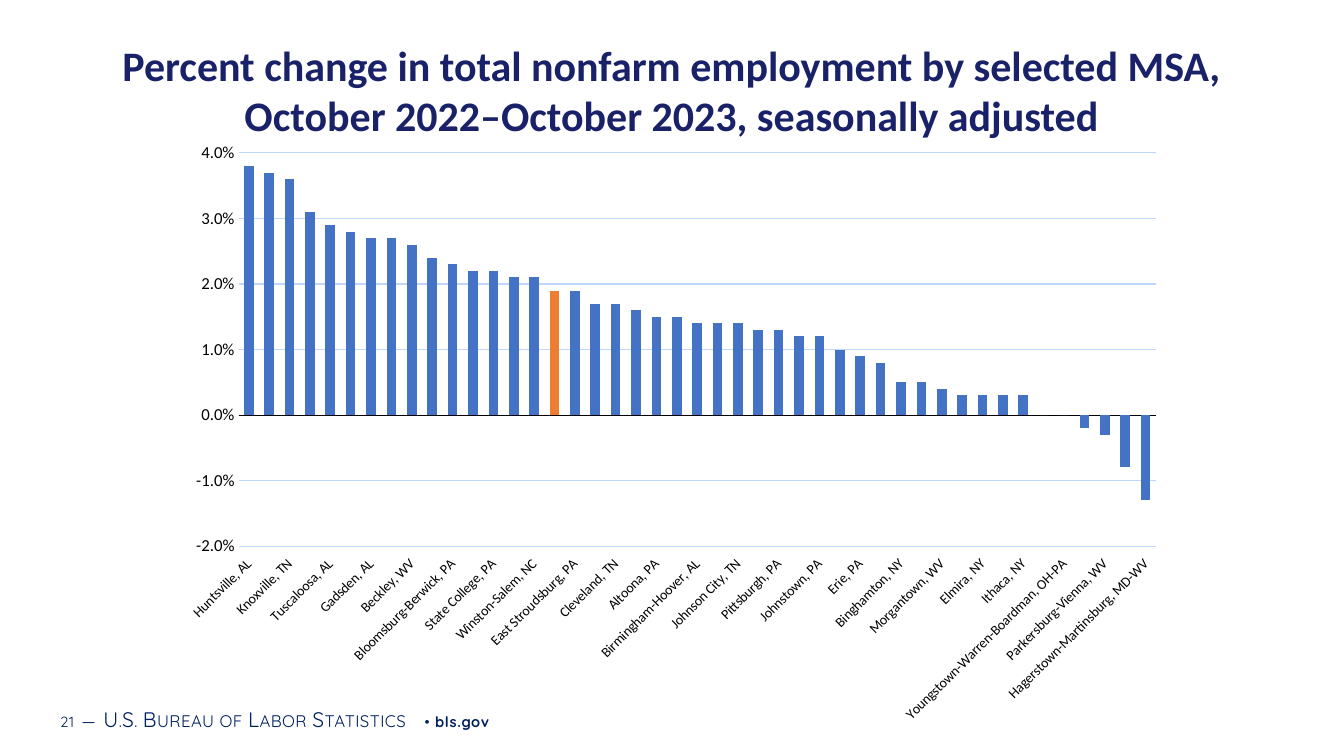
from dataclasses import dataclass

from lxml import etree
from pptx import Presentation
from pptx.chart.data import CategoryChartData
from pptx.dml.color import RGBColor
from pptx.enum.chart import XL_CHART_TYPE, XL_TICK_LABEL_POSITION, XL_TICK_MARK
from pptx.enum.text import MSO_ANCHOR, PP_ALIGN
from pptx.oxml import parse_xml
from pptx.oxml.ns import nsdecls, qn
from pptx.util import Pt

COLUMNS = XL_CHART_TYPE.COLUMN_CLUSTERED
LABELS_LOW = XL_TICK_LABEL_POSITION.LOW
NO_TICKS = XL_TICK_MARK.NONE
TOP, MIDDLE = MSO_ANCHOR.TOP, MSO_ANCHOR.MIDDLE
CENTER = PP_ALIGN.CENTER


@dataclass(frozen=True)
class Theme:
    title: RGBColor = RGBColor(0x19, 0x21, 0x68)
    navy: RGBColor = RGBColor(0x00, 0x20, 0x60)
    black: RGBColor = RGBColor(0x00, 0x00, 0x00)
    grid: RGBColor = RGBColor(0xC1, 0xD6, 0xFF)
    bar: RGBColor = RGBColor(0x44, 0x72, 0xC4)
    highlight: RGBColor = RGBColor(0xED, 0x7D, 0x31)
    text_face: str = "Calibri"
    footer_face: str = "Quicksand"
    title_size: float = 30
    value_size: float = 12
    category_size: float = 10
    footer_size: float = 10.5
    agency_size: float = 15
    gap_size: float = 16


theme = Theme()

employment_change = [
    ("Huntsville, AL", 0.038),
    ("Rome, GA", 0.037),
    ("Knoxville, TN", 0.036),
    ("Gainesville, GA", 0.031),
    ("Tuscaloosa, AL", 0.029),
    ("Dalton, GA", 0.028),
    ("Gadsden, AL", 0.027),
    ("Scranton--Wilkes-Barre--Hazleton, PA", 0.027),
    ("Beckley, WV", 0.026),
    ("Spartanburg, SC", 0.024),
    ("Bloomsburg-Berwick, PA", 0.023),
    ("Huntington-Ashland, WV-KY-OH", 0.022),
    ("State College, PA", 0.022),
    ("Anniston-Oxford-Jacksonville, AL", 0.021),
    ("Winston-Salem, NC", 0.021),
    ("United States", 0.019),
    ("East Stroudsburg, PA", 0.019),
    ("Asheville, NC", 0.017),
    ("Cleveland, TN", 0.017),
    ("Williamsport, PA", 0.016),
    ("Altoona, PA", 0.015),
    ("Kingsport-Bristol-Bristol, TN-VA", 0.015),
    ("Birmingham-Hoover, AL", 0.014),
    ("Chattanooga, TN-GA", 0.014),
    ("Johnson City, TN", 0.014),
    ("Cumberland, MD-WV", 0.013),
    ("Pittsburgh, PA", 0.013),
    ("Greenville-Anderson-Mauldin, SC", 0.012),
    ("Johnstown, PA", 0.012),
    ("Decatur, AL", 0.01),
    ("Erie, PA", 0.009),
    ("Morristown, TN", 0.008),
    ("Binghamton, NY", 0.005),
    ("Hickory-Lenoir-Morganton, NC", 0.005),
    ("Morgantown, WV", 0.004),
    ("Charleston, WV", 0.003),
    ("Elmira, NY", 0.003),
    ("Florence-Muscle Shoals, AL", 0.003),
    ("Ithaca, NY", 0.003),
    ("Weirton-Steubenville, WV-OH", 0),
    ("Youngstown-Warren-Boardman, OH-PA", 0),
    ("Blacksburg-Christiansburg-Radford, VA", -0.002),
    ("Parkersburg-Vienna, WV", -0.003),
    ("Wheeling, WV-OH", -0.008),
    ("Hagerstown-Martinsburg, MD-WV", -0.013),
]
areas = [area for area, change in employment_change]


def set_font(font, face, size, color, bold=False):
    font.name = face
    font.size = Pt(size)
    font.color.rgb = color
    font.bold = bold


deck = Presentation()
deck.slide_width, deck.slide_height = Pt(960), Pt(540)
page = deck.slides.add_slide(deck.slide_layouts[5])

footer = page.shapes.add_textbox(Pt(38), Pt(499), Pt(610), Pt(29))
frame = footer.text_frame
frame.word_wrap = True
frame.vertical_anchor = MIDDLE
frame.margin_left = frame.margin_right = Pt(5)
frame.margin_top = frame.margin_bottom = Pt(3)
para = frame.paragraphs[0]
for words, size, spacing, small_caps, bold in [
    ("21", theme.footer_size, 50, False, False),
    (" ", theme.gap_size, 50, False, False),
    ("—", theme.agency_size, 30, True, False),
    (" ", theme.gap_size, 50, False, False),
    ("U.S. Bureau of Labor Statistics", theme.agency_size, 30, True, False),
    (" • ", theme.footer_size, 50, False, False),
    ("bls.gov", theme.footer_size, 50, False, True),
]:
    span = para.add_run()
    span.text = words
    set_font(span.font, theme.footer_face, size, theme.navy, bold)
    properties = span._r.get_or_add_rPr()
    properties.set("spc", str(spacing))
    if small_caps:
        properties.set("cap", "small")

title = page.shapes.title
title.left, title.top, title.width, title.height = Pt(39), Pt(24.5), Pt(882), Pt(63.5)
title.text_frame.text = (
    "Percent change in total nonfarm employment by selected MSA,\v"
    "October 2022–October 2023, seasonally adjusted"
)
title.text_frame.vertical_anchor = TOP
title.text_frame.word_wrap = True
para = title.text_frame.paragraphs[0]
para.alignment = CENTER
set_font(para.font, theme.text_face, theme.title_size, theme.title, True)

data = CategoryChartData(number_format="0.0%")
data.categories = areas
data.add_series("Series 1", [change for area, change in employment_change])
chart = page.shapes.add_chart(COLUMNS, Pt(120), Pt(92), Pt(720), Pt(432), data).chart
chart.has_title = False
chart.has_legend = False
set_font(chart.font, theme.text_face, theme.category_size, theme.navy)

plot = chart.plots[0]
plot.vary_by_categories = False
plot.gap_width = 112
plot.overlap = -27
series = plot.series[0]
series.invert_if_negative = False
series.format.fill.solid()
series.format.fill.fore_color.rgb = theme.bar
national_bar = series.points[areas.index("United States")].format.fill
national_bar.solid()
national_bar.fore_color.rgb = theme.highlight

category_axis = chart.category_axis
category_axis.tick_label_position = LABELS_LOW
category_axis.format.line.color.rgb = theme.black
category_axis.format.line.width = Pt(0.75)
set_font(category_axis.tick_labels.font, theme.text_face, theme.category_size, theme.black)
label_body = category_axis._element.find(qn("c:txPr")).find(qn("a:bodyPr"))
label_body.set("rot", "-2700000")
label_body.set("vert", "horz")

value_axis = chart.value_axis
value_axis.minimum_scale, value_axis.maximum_scale = -0.02, 0.04
value_axis.major_unit = 0.01
value_axis.format.line.fill.background()
value_axis.major_gridlines.format.line.color.rgb = theme.grid
value_axis.major_gridlines.format.line.width = Pt(0.75)
value_axis.tick_labels.number_format = "0.0%"
value_axis.tick_labels.number_format_is_linked = False
set_font(value_axis.tick_labels.font, theme.text_face, theme.value_size, theme.black)

for axis in (category_axis, value_axis):
    axis.major_tick_mark = axis.minor_tick_mark = NO_TICKS

plot_area = chart._chartSpace.find(qn("c:chart")).find(qn("c:plotArea"))
for automatic_layout in plot_area.findall(qn("c:layout")):
    plot_area.remove(automatic_layout)
layout = parse_xml(f"<c:layout {nsdecls('c')}><c:manualLayout/></c:layout>")
for tag, setting in [
    ("layoutTarget", "inner"), ("xMode", "edge"), ("yMode", "edge"),
    ("x", "0.07"), ("y", "0.04"), ("w", "0.91"), ("h", "0.65"),
]:
    etree.SubElement(layout[0], qn(f"c:{tag}")).set("val", setting)
plot_area.insert(0, layout)

deck.save("out.pptx")
